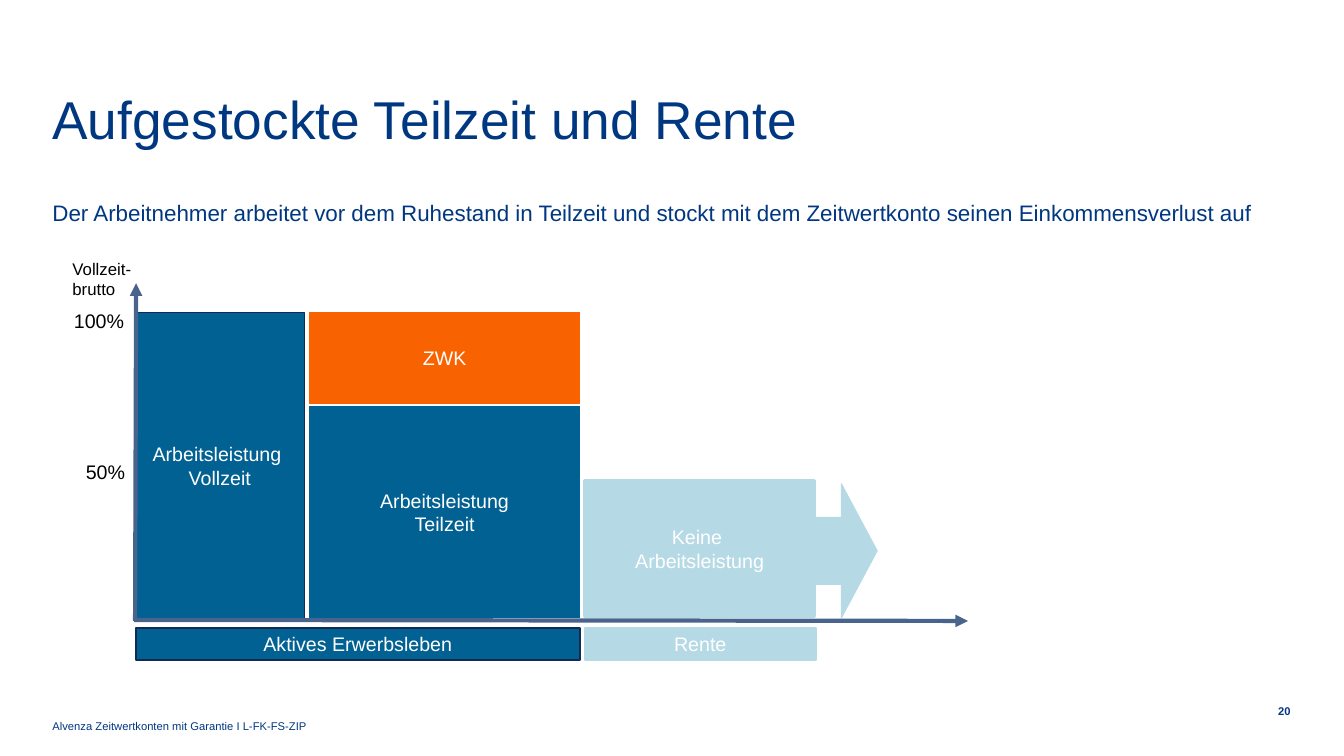
from dataclasses import dataclass

import pptx
import pptx.dml.color
import pptx.enum.dml
import pptx.enum.shapes
import pptx.enum.text
import pptx.oxml
import pptx.oxml.ns
import pptx.util

Inches = pptx.util.Inches
Pt = pptx.util.Pt
Align = pptx.enum.text.PP_ALIGN
Anchor = pptx.enum.text.MSO_ANCHOR
Kind = pptx.enum.shapes.MSO_SHAPE


@dataclass(frozen=True)
class Theme:
    font: str = "Arial"
    navy: str = "003781"
    blue: str = "006192"
    edge: str = "122B54"
    pale: str = "B5DAE6"
    orange: str = "F86200"
    axis: str = "49648C"
    white: str = "FFFFFF"
    black: str = "000000"
    head: int = 38
    lead: int = 16
    body: int = 14
    label: int = 12
    small: int = 8


THEME = Theme()


@dataclass(frozen=True)
class Block:
    left: float
    top: float
    width: float
    height: float
    text: str
    fill: str
    line: str
    weight: float = 0.75
    kind: Kind = Kind.RECTANGLE


@dataclass(frozen=True)
class Label:
    left: float
    top: float
    width: float
    height: float
    text: str
    size: int
    color: str = THEME.navy
    align: Align = Align.LEFT
    anchor: Anchor = Anchor.TOP
    pad: tuple = (0, 0)
    bold: bool = False
    space: object = None


@dataclass(frozen=True)
class Axis:
    start: tuple
    end: tuple


MID = 3.07
REST = 5.8
TOP = 3.1
BAND = 6.23
PAD = (0.1, 0.05)

BLOCKS = [
    Block(1.34, TOP, 1.68, 3.04, "Arbeitsleistung \vVollzeit", THEME.blue, THEME.edge),
    Block(REST, 4.77, 2.28, 1.35, "Keine \nArbeitsleistung", THEME.pale, THEME.pale, 2.25),
    Block(1.35, BAND, 4.4, 0.32, "Aktives Erwerbsleben", THEME.blue, THEME.edge, 1.5),
    Block(REST, BAND, 2.29, 0.32, "Rente", THEME.pale, THEME.pale, 1.5),
    Block(7.99, 4.8, 0.71, 1.33, "", THEME.pale, THEME.pale, kind=Kind.RIGHT_ARROW),
    Block(MID, 4.03, 2.68, 2.1, "Arbeitsleistung\nTeilzeit", THEME.blue, THEME.blue),
    Block(MID, TOP, 2.68, 0.9, "ZWK", THEME.orange, THEME.orange),
]

AXES = [Axis((1.33, 6.15), (9.6, 6.16)), Axis((1.34, 6.16), (1.35, 2.81))]

TITLE = Label(0.52, 0.96, 10.2, 1.02, "Aufgestockte Teilzeit und Rente",
              THEME.head, space=Pt(38))

LABELS = [
    Label(0.52, 1.98, 12.28, 0.4,
          "Der Arbeitnehmer arbeitet vor dem Ruhestand in Teilzeit und stockt "
          "mit dem Zeitwertkonto seinen Einkommensverlust auf", THEME.lead),
    Label(0.62, 2.52, 1.04, 0.49, "Vollzeit- brutto", THEME.label, THEME.black, pad=PAD),
    Label(0.62, 3.02, 0.71, 0.33, "100%", THEME.body, THEME.black, Align.RIGHT, pad=PAD),
    Label(0.36, 4.51, 0.98, 0.33, "50%", THEME.body, THEME.black, Align.RIGHT, pad=PAD),
    Label(0.52, 6.89, 10.2, 0.38, "Alvenza Zeitwertkonten mit Garantie I L-FK-FS-ZIP",
          THEME.small, anchor=Anchor.BOTTOM, space=0.9),
    Label(12.51, 6.97, 0.29, 0.16, "20", THEME.small, align=Align.RIGHT,
          anchor=Anchor.MIDDLE, bold=True, space=Pt(10)),
]


def tint(code: str) -> pptx.dml.color.RGBColor:
    return pptx.dml.color.RGBColor.from_string(code)


def write(frame, text: str, *, size: int, color: str, align=Align.LEFT,
          anchor=Anchor.TOP, pad=PAD, bold=False, space=None, wrap=True) -> None:
    frame.auto_size = pptx.enum.text.MSO_AUTO_SIZE.NONE
    frame.word_wrap = wrap
    frame.vertical_anchor = anchor
    frame.margin_left = frame.margin_right = Inches(pad[0])
    frame.margin_top = frame.margin_bottom = Inches(pad[1])
    frame.text = text
    for para in frame.paragraphs:
        para.alignment = align
        if space is not None:
            para.line_spacing = space
        for run in para.runs:
            run.font.name = THEME.font
            run.font.size = Pt(size)
            run.font.bold = bold
            run.font.color.rgb = tint(color)


def fill_label(shape, label: Label) -> None:
    write(shape.text_frame, label.text, size=label.size, color=label.color,
          align=label.align, anchor=label.anchor, pad=label.pad,
          bold=label.bold, space=label.space)


def place(item) -> tuple:
    return tuple(Inches(v) for v in (item.left, item.top, item.width, item.height))


def draw_title(slide, label: Label) -> None:
    title = slide.shapes.title
    title.left, title.top, title.width, title.height = place(label)
    fill_label(title, label)


def draw_label(slide, label: Label) -> None:
    fill_label(slide.shapes.add_textbox(*place(label)), label)


def draw_block(slide, block: Block) -> None:
    shape = slide.shapes.add_shape(block.kind, *place(block))
    shape.shadow.inherit = False
    shape.fill.solid()
    shape.fill.fore_color.rgb = tint(block.fill)
    shape.line.color.rgb = tint(block.line)
    shape.line.width = Pt(block.weight)
    if block.text:
        write(shape.text_frame, block.text, size=THEME.body, color=THEME.white,
              align=Align.CENTER, anchor=Anchor.MIDDLE, wrap=False)


def draw_axis(slide, axis: Axis) -> None:
    ends = [Inches(v) for v in (*axis.start, *axis.end)]
    line = slide.shapes.add_connector(pptx.enum.shapes.MSO_CONNECTOR.STRAIGHT, *ends)
    line.line.color.rgb = tint(THEME.axis)
    line.line.width = Pt(3)
    tip = pptx.oxml.parse_xml(
        f'<a:tailEnd {pptx.oxml.ns.nsdecls("a")} type="triangle"/>')
    line.line._get_or_add_ln().append(tip)
    line._element.spPr.append(
        pptx.oxml.parse_xml(f'<a:effectLst {pptx.oxml.ns.nsdecls("a")}/>'))


def main() -> None:
    deck = pptx.Presentation()
    deck.slide_width = Inches(13.33)
    deck.slide_height = Inches(7.5)
    slide = deck.slides.add_slide(deck.slide_layouts[5])
    draw_title(slide, TITLE)
    for block in BLOCKS:
        draw_block(slide, block)
    for axis in AXES:
        draw_axis(slide, axis)
    for label in LABELS:
        draw_label(slide, label)
    deck.save("out.pptx")


if __name__ == "__main__":
    main()
